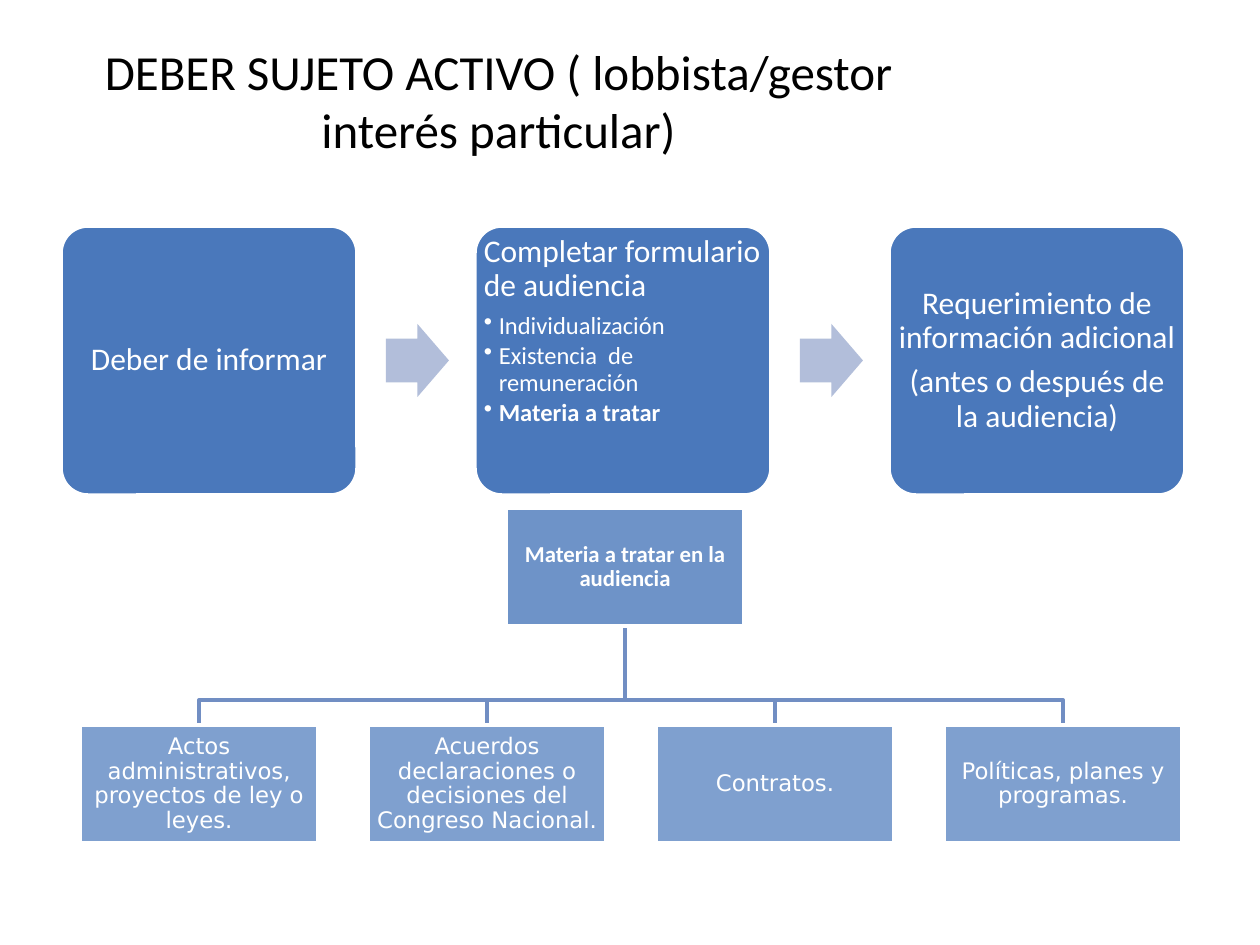
from lxml import etree
from pptx import Presentation
from pptx.dml.color import RGBColor
from pptx.enum.shapes import MSO_SHAPE
from pptx.enum.text import MSO_ANCHOR, PP_ALIGN
from pptx.oxml.ns import qn
from pptx.util import Inches, Pt

ROUNDED, ARROW, RECT = (MSO_SHAPE.ROUNDED_RECTANGLE, MSO_SHAPE.RIGHT_ARROW,
                        MSO_SHAPE.RECTANGLE)
TOP, MIDDLE = MSO_ANCHOR.TOP, MSO_ANCHOR.MIDDLE
LEFT, CENTER = PP_ALIGN.LEFT, PP_ALIGN.CENTER

TITLE = "DEBER SUJETO ACTIVO ( lobbista/gestor interés particular)"
STEPS = [
    {"heads": ["Deber de informar"], "bullets": []},
    {"heads": ["Completar formulario de audiencia"],
     "bullets": ["Individualización", "Existencia  de remuneración",
                 "Materia a tratar"]},
    {"heads": ["Requerimiento de información adicional",
               "(antes o después de la audiencia)"], "bullets": []},
]
BOLD_BULLET = "Materia a tratar"
ROOT = "Materia a tratar en la audiencia"
LEAVES = [
    "Actos administrativos, proyectos de ley o leyes.",
    "Acuerdos declaraciones o decisiones del Congreso Nacional.",
    "Contratos.",
    "Políticas, planes y programas.",
]

BLACK = RGBColor(0x00, 0x00, 0x00)
WHITE = RGBColor(0xFF, 0xFF, 0xFF)
BLUE = RGBColor(0x4A, 0x78, 0xBB)
PALE = RGBColor(0xB2, 0xBE, 0xDA)
BRANCH = RGBColor(0x71, 0x8E, 0xC3)
BODY, LEAF_FONT = "Calibri", "DejaVu Sans"

PX = Inches(1) / 126
STEP_X, STEP_Y, STEP_W, STEP_H, STEP_PITCH = 61, 226, 296, 269, 414
ARROW_DX, ARROW_W, ARROW_H = 325, 63, 73
ROOT_X, ROOT_Y, LEAF_X, LEAF_Y, LEAF_PITCH = 506, 508, 80, 725, 288
NODE_W, NODE_H, BEND_Y = 238, 118, 700
BULLET_INDENT = 15


def px(n):
    return round(n * PX)


def add_box(shapes, kind, x, y, w, h, fill, line=None, alpha=None):
    sp = shapes.add_shape(kind, px(x), px(y), px(w), px(h))
    sp.shadow.inherit = False
    sp.fill.solid()
    sp.fill.fore_color.rgb = fill
    if alpha:
        color = sp.fill._xPr.find(".//" + qn("a:srgbClr"))
        etree.SubElement(color, qn("a:alpha")).set("val", str(alpha * 1000))
    if line is None:
        sp.line.fill.background()
    else:
        sp.line.color.rgb = line
        sp.line.width = Pt(2)
    return sp


def prepare_frame(sp, anchor):
    tf = sp.text_frame
    tf.word_wrap = True
    tf.vertical_anchor = anchor
    tf.margin_left = tf.margin_right = tf.margin_top = tf.margin_bottom = px(1)
    return tf


def write(p, text, size, align=CENTER, font=BODY, bold=False, after=6):
    p.text = text
    p.alignment = align
    p.line_spacing = 0.9
    p.space_after = Pt(after)
    f = p.runs[0].font
    f.name, f.size, f.bold, f.color.rgb = font, Pt(size), bold, WHITE


def add_bullet(p):
    pPr = p._p.get_or_add_pPr()
    pPr.set("marL", str(px(BULLET_INDENT)))
    pPr.set("indent", str(-px(BULLET_INDENT)))
    etree.SubElement(pPr, qn("a:buChar")).set("char", "•")


def add_step(shapes, x, step):
    sp = add_box(shapes, ROUNDED, x, STEP_Y, STEP_W, STEP_H, BLUE, WHITE)
    sp.adjustments[0] = 0.1
    bullets = step["bullets"]
    align = LEFT if bullets else CENTER
    tf = prepare_frame(sp, TOP if bullets else MIDDLE)
    for i, text in enumerate(step["heads"]):
        write(tf.paragraphs[0] if i == 0 else tf.add_paragraph(), text, 18, align)
    for text in bullets:
        p = tf.add_paragraph()
        p.level = 1
        add_bullet(p)
        write(p, text, 14, align, bold=text == BOLD_BULLET, after=2)


def add_arrow(shapes, x):
    y = STEP_Y + (STEP_H - ARROW_H) / 2
    sp = add_box(shapes, ARROW, x, y, ARROW_W, ARROW_H, PALE)
    sp.adjustments[0], sp.adjustments[1] = 0.6, 0.5


def add_branch(shapes, leaf_x):
    start, end = ROOT_X + NODE_W / 2, leaf_x + NODE_W / 2
    builder = shapes.build_freeform(px(start), px(ROOT_Y + NODE_H))
    builder.add_line_segments(
        [(px(start), px(BEND_Y)), (px(end), px(BEND_Y)), (px(end), px(LEAF_Y))],
        close=False)
    sp = builder.convert_to_shape()
    sp.shadow.inherit = False
    sp.fill.background()
    sp.line.color.rgb = BRANCH
    sp.line.width = Pt(2)


def add_node(shapes, x, y, text, alpha, font, bold=False):
    sp = add_box(shapes, RECT, x, y, NODE_W, NODE_H, BLUE, WHITE, alpha)
    write(prepare_frame(sp, MIDDLE).paragraphs[0], text, 13, font=font, bold=bold)


def main():
    prs = Presentation()
    prs.slide_width, prs.slide_height = Inches(10), Inches(7.5)
    slide = prs.slides.add_slide(prs.slide_layouts[5])
    shapes = slide.shapes

    title = shapes.title
    title.left, title.top, title.width, title.height = map(px, (40, 21, 917, 158))
    tf = title.text_frame
    tf.text = TITLE
    tf.vertical_anchor = MIDDLE
    p = tf.paragraphs[0]
    p.alignment = CENTER
    f = p.runs[0].font
    f.name, f.size, f.color.rgb = BODY, Pt(28), BLACK

    for i, step in enumerate(STEPS):
        x = STEP_X + i * STEP_PITCH
        add_step(shapes, x, step)
        if i < len(STEPS) - 1:
            add_arrow(shapes, x + ARROW_DX)

    leaf_xs = [LEAF_X + i * LEAF_PITCH for i in range(len(LEAVES))]
    for x in leaf_xs:
        add_branch(shapes, x)
    add_node(shapes, ROOT_X, ROOT_Y, ROOT, 80, BODY, bold=True)
    for x, text in zip(leaf_xs, LEAVES):
        add_node(shapes, x, LEAF_Y, text, 70, LEAF_FONT)

    prs.save("out.pptx")


if __name__ == "__main__":
    main()
